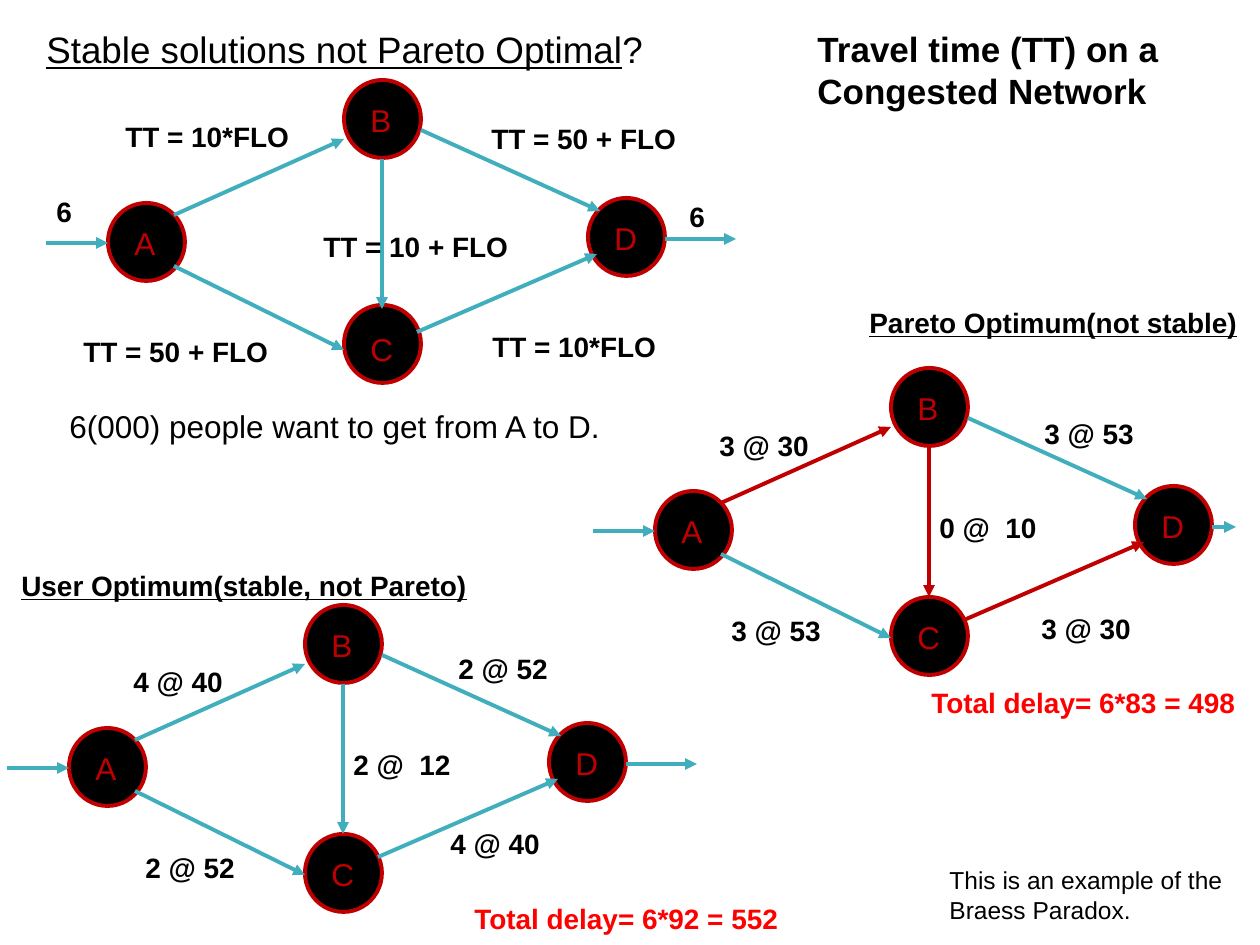
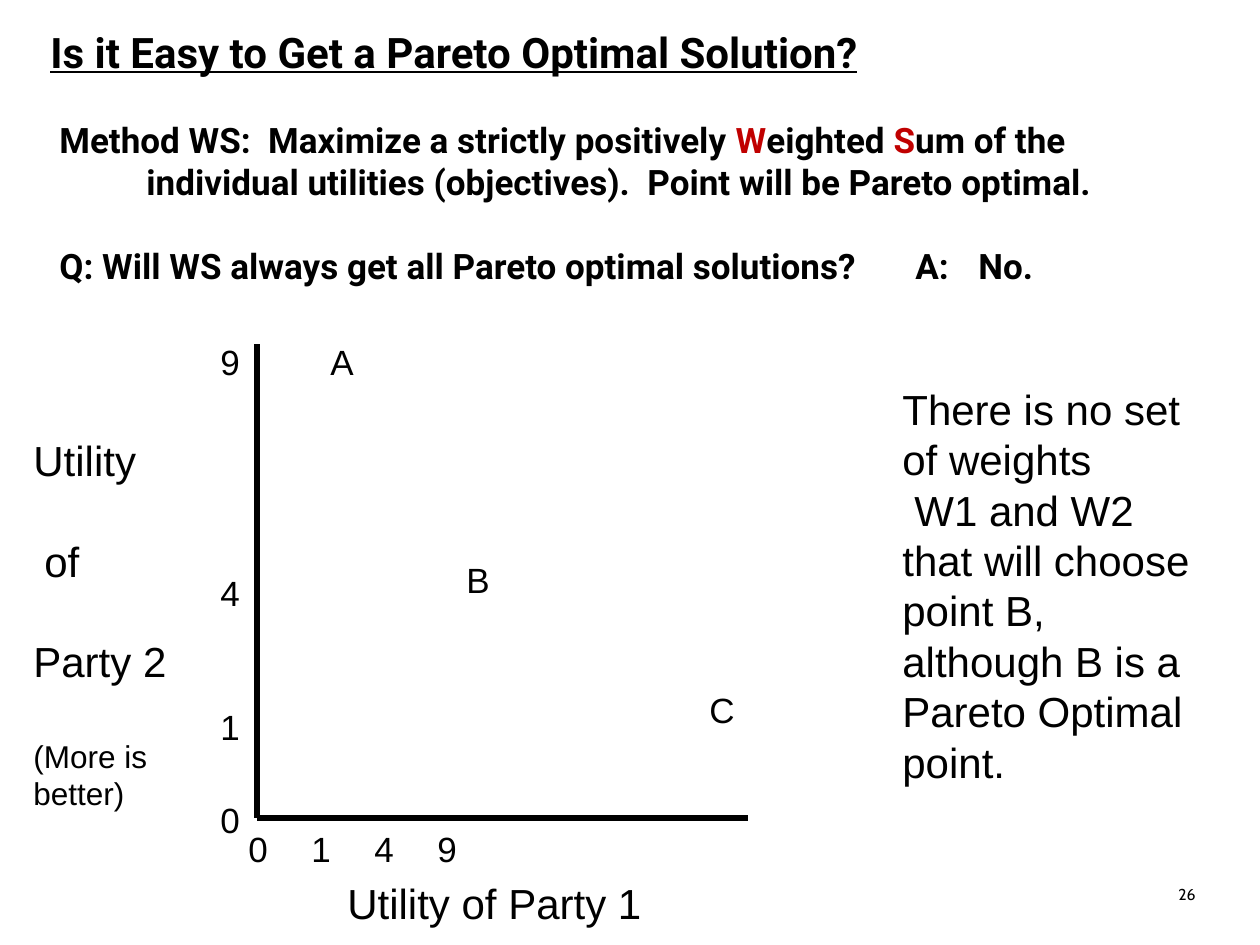
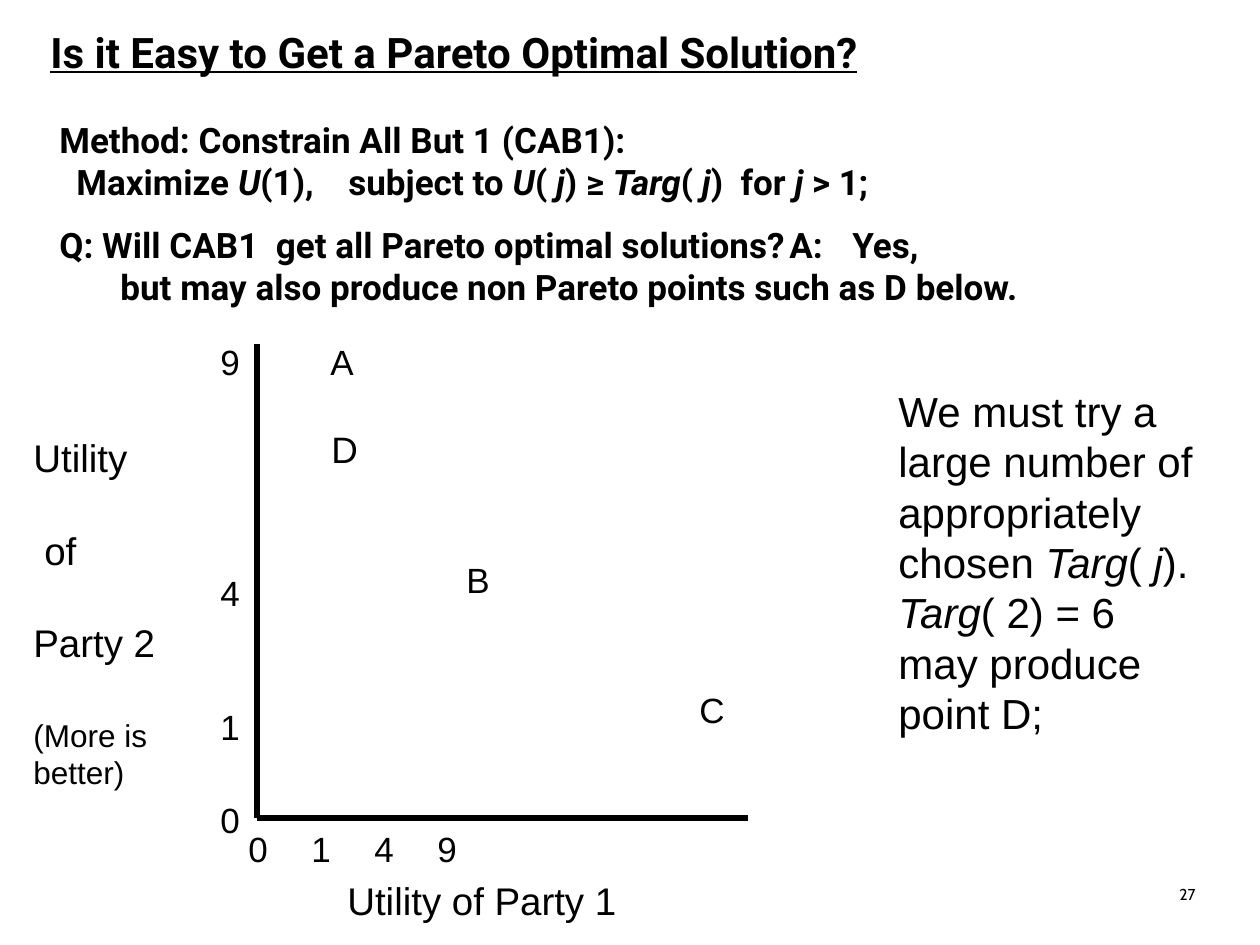
from dataclasses import dataclass

from lxml import etree
from pptx import Presentation
from pptx.dml.color import RGBColor
from pptx.enum.shapes import MSO_CONNECTOR, MSO_SHAPE
from pptx.enum.text import MSO_ANCHOR, PP_ALIGN
from pptx.oxml.ns import qn
from pptx.util import Emu, Pt

STRAIGHT = MSO_CONNECTOR.STRAIGHT
ELLIPSE = MSO_SHAPE.OVAL
MIDDLE, TOP = MSO_ANCHOR.MIDDLE, MSO_ANCHOR.TOP
LEFT, RIGHT = PP_ALIGN.LEFT, PP_ALIGN.RIGHT

PX_PER_INCH = 126
SLIDE_SIZE = (1260, 945)
LEADING = 1.2


def px(length):
    return Emu(round(length * 914400 / PX_PER_INCH))


@dataclass(frozen=True)
class Theme:
    ink: str = "000000"
    accent: str = "C00000"
    arrow: str = "41AEBD"
    alert: str = "FF0000"
    sans: str = "Arial"
    heading: str = "Roboto"
    footer: str = "Cabin"
    title: int = 24
    point: int = 21
    body: int = 20
    node: int = 18
    label: int = 16
    remark: int = 14
    page: int = 9
    edge: float = 2.25
    axis: float = 3


THEME = Theme()
ITALIC = {"italic": True}
ACCENT = {"color": THEME.accent}
UNDERLINE = {"underline": True}


@dataclass
class Line:
    """One paragraph: gap in points above it, indent and tabs in px."""
    runs: str | list
    size: int = THEME.body
    gap: float = 0
    indent: int = 0
    tabs: tuple = ()
    underline: bool = False


class Deck:
    def __init__(self, theme):
        self.theme = theme
        self.presentation = Presentation()
        self.presentation.slide_width, self.presentation.slide_height = map(px, SLIDE_SIZE)
        self.slide = None

    def new_slide(self):
        self.slide = self.presentation.slides.add_slide(self.presentation.slide_layouts[6])

    def text(self, left, top, width, lines, height=None, font=None, color=None,
             bold=False, align=LEFT, anchor=TOP):
        if height is None:
            points = sum(line.size * LEADING + line.gap for line in lines)
            height = round((points / 72 + 0.1) * PX_PER_INCH)
        box = self.slide.shapes.add_textbox(px(left), px(top), px(width), px(height))
        frame = box.text_frame
        frame.word_wrap = True
        frame.vertical_anchor = anchor
        for number, line in enumerate(lines):
            paragraph = frame.paragraphs[0] if number == 0 else frame.add_paragraph()
            paragraph.alignment = align
            paragraph.line_spacing = Pt(line.size * LEADING)
            if line.gap:
                paragraph.space_before = Pt(line.gap)
            self.indent(paragraph, line)
            paragraph.font.name = font or self.theme.sans
            paragraph.font.size = Pt(line.size)
            paragraph.font.bold = bold
            paragraph.font.color.rgb = RGBColor.from_string(color or self.theme.ink)
            if line.underline:
                paragraph.font.underline = True
            self.runs(paragraph, line.runs)

    def indent(self, paragraph, line):
        """Shift the first line and add the tab stops."""
        properties = paragraph._p.get_or_add_pPr()
        properties.set("marL", "0")
        properties.set("indent", str(px(line.indent)))
        if line.tabs:
            stops = etree.SubElement(properties, qn("a:tabLst"))
            for stop in line.tabs:
                etree.SubElement(stops, qn("a:tab"), pos=str(px(stop)), algn="l")

    def runs(self, paragraph, runs):
        for part in [runs] if isinstance(runs, str) else runs:
            words, style = (part, {}) if isinstance(part, str) else part
            run = paragraph.add_run()
            run.text = words
            if "italic" in style:
                run.font.italic = True
            if "underline" in style:
                run.font.underline = True
            if "color" in style:
                run.font.color.rgb = RGBColor.from_string(style["color"])

    def label(self, left, top, width, words, color=None, underline=False):
        line = Line(words, self.theme.label, underline=underline)
        self.text(left, top, width, [line], color=color, bold=True)

    def node(self, left, top):
        circle = self.slide.shapes.add_shape(ELLIPSE, px(left), px(top), px(77), px(78))
        circle.shadow.inherit = False
        circle.fill.solid()
        circle.fill.fore_color.rgb = RGBColor.from_string(self.theme.ink)
        circle.line.color.rgb = RGBColor.from_string(self.theme.accent)
        circle.line.width = Pt(self.theme.edge)

    def line(self, start, end, color, width, arrow=False):
        connector = self.slide.shapes.add_connector(STRAIGHT, *map(px, (*start, *end)))
        connector.line.color.rgb = RGBColor.from_string(color)
        connector.line.width = Pt(width)
        if arrow:
            etree.SubElement(connector.line._get_or_add_ln(), qn("a:tailEnd"), type="triangle")
        etree.SubElement(connector._element.spPr, qn("a:effectLst"))

    def page_number(self, number):
        self.text(925, 869, 283, [Line(str(number), self.theme.page)], height=50,
                  font=self.theme.footer, align=RIGHT, anchor=MIDDLE)


# Places in a network are offsets from the top left of node A.
NODES = {"A": (0, 0), "D": (480, -5), "C": (236, 106), "B": (236, -123)}
EDGES = {
    "AB": ((66, 12), (236, -64)),
    "BC": ((274, -44), (274, 106)),
    "AC": ((66, 63), (236, 147)),
    "BD": ((313, -73), (492, 8)),
    "CD": ((309, 129), (489, 51)),
    "in": ((-62, 40), (0, 40)),
}
EXIT = (557, 36)
LABEL_WIDTHS = {"AB": 275, "BD": 238, "BC": 219, "AC": 219, "CD": 192}


def network(deck, left, top, edge_labels, exit_length=71, c_lift=0, highlighted=()):
    theme = deck.theme
    for name, (x, y) in NODES.items():
        deck.node(left + x, top + y - (c_lift if name == "C" else 0))
    edges = {**EDGES, "out": (EXIT, (EXIT[0] + exit_length, EXIT[1]))}
    for name, ends in edges.items():
        start, end = [(left + x, top + y) for x, y in ends]
        color = theme.accent if name in highlighted else theme.arrow
        deck.line(start, end, color, theme.edge, arrow=True)
    for name, (x, y) in NODES.items():
        deck.text(left + x + 14, top + y + 15, 63, [Line(name, theme.node)], color=theme.accent)
    for edge, (words, x, y) in edge_labels.items():
        deck.label(x, y, LABEL_WIDTHS[edge], words)


def braess_slide(deck):
    theme = deck.theme
    deck.new_slide()
    title = [("Stable solutions not Pareto Optimal", UNDERLINE), "?"]
    deck.text(34, 21, 1178, [Line(title, theme.point)])
    network(deck, 108, 203, {
        "AB": ("TT = 10*FLO", 113, 113),
        "BD": ("TT = 50 + FLO", 479, 115),
        "BC": ("TT = 10 + FLO", 311, 223),
        "AC": ("TT = 50 + FLO", 71, 328),
        "CD": ("TT = 10*FLO", 480, 323),
    }, c_lift=4)
    network(deck, 655, 491, {
        "AB": ("3 @ 30", 707, 422),
        "BD": ("3 @ 53", 1032, 410),
        "BC": ("0 @  10", 927, 504),
        "AC": ("3 @ 53", 719, 607),
        "CD": ("3 @ 30", 1029, 605),
    }, exit_length=24, highlighted=("AB", "BC", "CD"))
    network(deck, 69, 728, {
        "AB": ("4 @ 40", 121, 658),
        "BD": ("2 @ 52", 446, 645),
        "BC": ("2 @  12", 341, 741),
        "AC": ("2 @ 52", 133, 844),
        "CD": ("4 @ 40", 438, 820),
    })
    deck.label(919, 679, 346, "Total delay= 6*83 = 498", theme.alert)
    deck.label(462, 895, 336, "Total delay= 6*92 = 552", theme.alert)
    deck.label(857, 299, 399, "Pareto Optimum(not stable)", underline=True)
    deck.label(9, 562, 489, "User Optimum(stable, not Pareto)", underline=True)
    deck.label(44, 188, 55, "6")
    deck.label(677, 193, 55, "6")
    deck.text(805, 21, 387, [Line("Travel time (TT) on a Congested Network")], height=97, bold=True)
    deck.text(57, 401, 561, [Line("6(000) people want to get from A to D.", theme.node)])
    deck.text(937, 859, 319, [Line("This is an example of the Braess Paradox.", theme.remark)],
              height=72)


def utility_slide(deck, page, method, points, note, note_place, axis_size):
    theme = deck.theme
    origin = (257, 818)
    deck.new_slide()
    deck.page_number(page)
    title = Line("Is it Easy to Get a Pareto Optimal Solution?", theme.title, indent=17,
                 underline=True)
    deck.text(21, 20, 1239, [title, *method], font=theme.heading, bold=True)
    for end in ((257, 344), (748, 818)):
        deck.line(origin, end, theme.ink, theme.axis)
    deck.text(236, 821, 580, [Line("0\t1\t4\t9", tabs=(88, 233, 467))])
    ticks = {"9": 0, "4": 108, "1": 52.8, "0": 28.8}
    deck.text(208, 334, 73, [Line(tick, gap=gap) for tick, gap in ticks.items()])
    deck.text(281, 334, 489, points)
    deck.text(*note_place, 331, note, height=420)
    blank = axis_size * LEADING
    deck.text(21, 428, 160, [
        Line("Utility", axis_size),
        Line("of", axis_size, gap=blank, indent=11),
        Line("Party 2", axis_size, gap=blank),
        Line("(More is better)", theme.node, gap=28.8),
    ], height=394)
    deck.text(335, 871, 393, [Line("Utility of Party 1", axis_size)])


def weighted_sum_slide(deck):
    size = deck.theme.title
    method = [
        Line(["Method WS:  Maximize a strictly positively ", ("W", ACCENT), "eighted ",
              ("S", ACCENT), "um of the"], gap=24, indent=26),
        Line("individual utilities (objectives).  Point will be Pareto optimal.", indent=113),
        Line("Q: Will WS always get all Pareto optimal solutions?\tA:\tNo.", gap=24, indent=26,
             tabs=(849, 916)),
    ]
    points = [
        Line("A", indent=37),
        Line("B", gap=100.8, indent=173),
        Line("C", gap=50.4, indent=416),
    ]
    note = [
        Line("There is no set of weights", size),
        Line("W1 and W2 that will choose point B, although B is a", size, indent=12),
        Line("Pareto Optimal point.", size),
    ]
    utility_slide(deck, 26, method, points, note, (890, 377), axis_size=24)


def constraint_slide(deck):
    theme = deck.theme
    target = [("Targ", ITALIC), "( ", ("j", ITALIC)]
    method = [
        Line("Method: Constrain All But 1 (CAB1):", gap=24, indent=26),
        Line(["Maximize ", ("U", ITALIC), "(1),\tsubject to ", ("U", ITALIC), "( ",
              ("j", ITALIC), ") ≥ ", *target, ")  for ", ("j", ITALIC), " > 1;"],
             indent=43, tabs=(324,)),
        Line("Q: Will CAB1  get all Pareto optimal solutions?\tA:\tYes,", gap=12, indent=26,
             tabs=(777, 846)),
        Line("but may also produce non Pareto points such as D below.", indent=87),
    ]
    points = [
        Line("A", indent=37),
        Line("D", theme.point, gap=25.2, indent=38),
        Line("B", gap=50.4, indent=173),
        Line("C", gap=50.4, indent=406),
    ]
    note = [
        Line(["We must try a large number of appropriately chosen ", *target, ")."], theme.title),
        Line([("Targ", ITALIC), "( 2) = 6 may produce point D;"], theme.title),
    ]
    utility_slide(deck, 27, method, points, note, (886, 379), axis_size=22)


def main():
    deck = Deck(THEME)
    braess_slide(deck)
    weighted_sum_slide(deck)
    constraint_slide(deck)
    deck.presentation.save("out.pptx")


if __name__ == "__main__":
    main()
